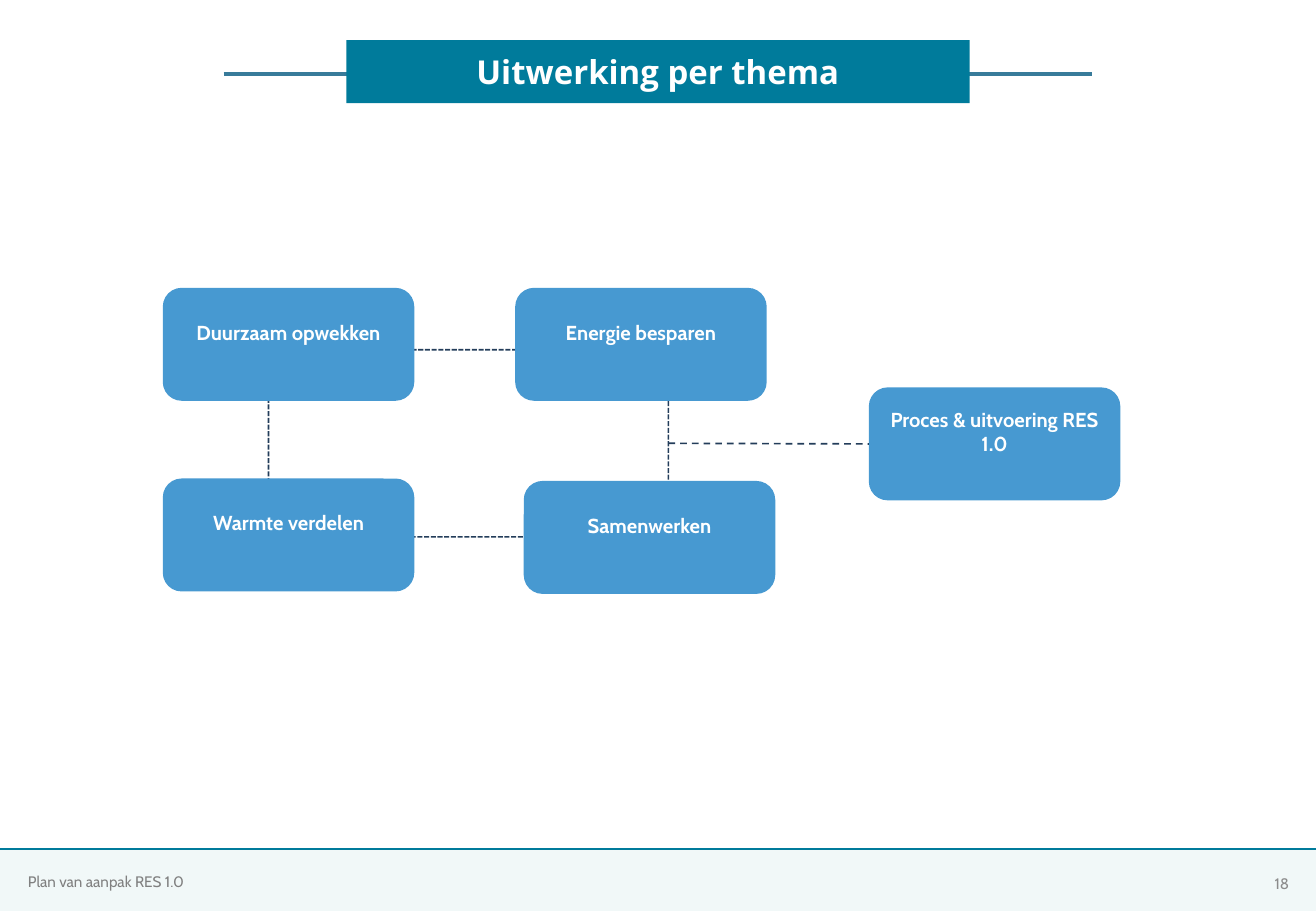
from lxml.etree import SubElement
from pptx import Presentation
from pptx.dml.color import RGBColor
from pptx.enum.dml import MSO_LINE
from pptx.enum.shapes import MSO_CONNECTOR, MSO_SHAPE
from pptx.enum.text import MSO_ANCHOR, MSO_AUTO_SIZE, PP_ALIGN
from pptx.oxml.ns import qn
from pptx.util import Inches, Pt

WHITE = RGBColor(0xFF, 0xFF, 0xFF)
TEAL = RGBColor(0x00, 0x7B, 0x9B)
TITLE_LINE = RGBColor(0x38, 0x7B, 0x9A)
NAVY = RGBColor(0x23, 0x3D, 0x5A)
BLUE = RGBColor(0x47, 0x99, 0xD1)
PALE_TEAL = RGBColor(0xE4, 0xF3, 0xF3)
FOOTER_GREY = RGBColor(0x80, 0x80, 0x80)
NUMBER_GREY = RGBColor(0x8C, 0x8C, 0x8C)

TITLE_FONT = {"name": "Open Sans", "size": Pt(19.5), "bold": True}
THEME_FONT = {"name": "Cabin", "size": Pt(12), "bold": True}
FOOTER_FONT = {"name": "Cabin", "size": Pt(9), "bold": False}

THEME_SIZE = (19.11, 12.4)
THEMES = {
    "Warmte verdelen": (12.37, 52.53),
    "Duurzaam opwekken": (12.37, 31.6),
    "Energie besparen": (39.15, 31.6),
    "Samenwerken": (39.8, 52.8),
    "Proces & uitvoering RES 1.0": (66.02, 42.53),
}


class SlideBuilder:
    """Places elements on a grid of 100 columns by 100 rows."""

    def __init__(self, presentation):
        self.column = presentation.slide_width / 100
        self.row = presentation.slide_height / 100
        self.slide = presentation.slides.add_slide(presentation.slide_layouts[5])

    def lengths(self, left, top, width, height):
        return (round(left * self.column), round(top * self.row),
                round(width * self.column), round(height * self.row))

    def set_text(self, shape, text, font, color, align, insets=(0, 0, 0, 0)):
        """Insets are left, top, right and bottom, in inches."""
        frame = shape.text_frame
        frame.text = text
        frame.word_wrap = True
        frame.auto_size = MSO_AUTO_SIZE.NONE
        frame.vertical_anchor = MSO_ANCHOR.MIDDLE
        for side, inset in zip(("left", "top", "right", "bottom"), insets):
            setattr(frame, f"margin_{side}", Inches(inset))
        paragraph = frame.paragraphs[0]
        paragraph.alignment = align
        for name, value in font.items():
            setattr(paragraph.font, name, value)
        paragraph.font.color.rgb = color
        return paragraph

    def title(self, text, box):
        title = self.slide.shapes.title
        title.left, title.top, title.width, title.height = self.lengths(*box)
        title.fill.solid()
        title.fill.fore_color.rgb = TEAL
        paragraph = self.set_text(title, text, TITLE_FONT, WHITE,
                                  PP_ALIGN.CENTER, (0, 0.03, 0, 0))
        paragraph.line_spacing = 0.9
        # Bring the title in front of the line that runs behind it
        self.slide.shapes.element.append(title.element)

    def shape(self, kind, box, color):
        shape = self.slide.shapes.add_shape(kind, *self.lengths(*box))
        shape.shadow.inherit = False
        shape.fill.solid()
        shape.fill.fore_color.rgb = color
        shape.line.fill.background()
        return shape

    def band(self, box, opacity):
        band = self.shape(MSO_SHAPE.RECTANGLE, box, PALE_TEAL)
        color = band.element.spPr.find(f"{qn('a:solidFill')}/{qn('a:srgbClr')}")
        SubElement(color, qn("a:alpha"), val=str(opacity * 1000))

    def theme(self, text, position):
        theme = self.shape(MSO_SHAPE.ROUNDED_RECTANGLE, position + THEME_SIZE, BLUE)
        self.set_text(theme, text, THEME_FONT, WHITE, PP_ALIGN.CENTER,
                      (0.1, 0.05, 0.1, 0.25))
        return theme

    def text(self, text, box, color, align):
        text_box = self.slide.shapes.add_textbox(*self.lengths(*box))
        self.set_text(text_box, text, FOOTER_FONT, color, align)

    def outline(self, line, color, width, dash=None):
        line.color.rgb = color
        line.width = Pt(width)
        line.dash_style = dash

    def line(self, start, end, color, width, dash=None):
        connector = self.slide.shapes.add_connector(
            MSO_CONNECTOR.STRAIGHT, *self.lengths(*start, *end))
        self.outline(connector.line, color, width, dash)
        SubElement(connector.element.spPr, qn("a:effectLst"))
        return connector


def main():
    presentation = Presentation()
    presentation.slide_width = Inches(10.83)
    presentation.slide_height = Inches(7.5)
    builder = SlideBuilder(presentation)

    builder.band((0, 93.2, 100, 6.8), 50)
    builder.line((100, 93.2), (0, 93.2), TEAL, 1)
    builder.line((17, 8.13), (83, 8.13), TITLE_LINE, 2.25)
    builder.title("Uitwerking per thema", (26.32, 4.4, 47.37, 6.93))

    theme_loop = builder.shape(MSO_SHAPE.ROUNDED_RECTANGLE,
                               (20.41, 38.4, 30.38, 20.53), WHITE)
    builder.outline(theme_loop.line, NAVY, 1, MSO_LINE.SQUARE_DOT)
    themes = {text: builder.theme(text, position)
              for text, position in THEMES.items()}

    process_link = builder.line((50.79, 48.7), (66.02, 48.7), NAVY, 1, MSO_LINE.DASH)
    process_link.begin_connect(theme_loop, 3)
    process_link.end_connect(themes["Proces & uitvoering RES 1.0"], 1)

    builder.text("Plan van aanpak RES 1.0", (2.12, 94.27, 41.27, 5.07),
                 FOOTER_GREY, PP_ALIGN.LEFT)
    builder.text("18", (94.37, 94.27, 3.6, 5.33), NUMBER_GREY, PP_ALIGN.RIGHT)
    presentation.save("out.pptx")


if __name__ == "__main__":
    main()
